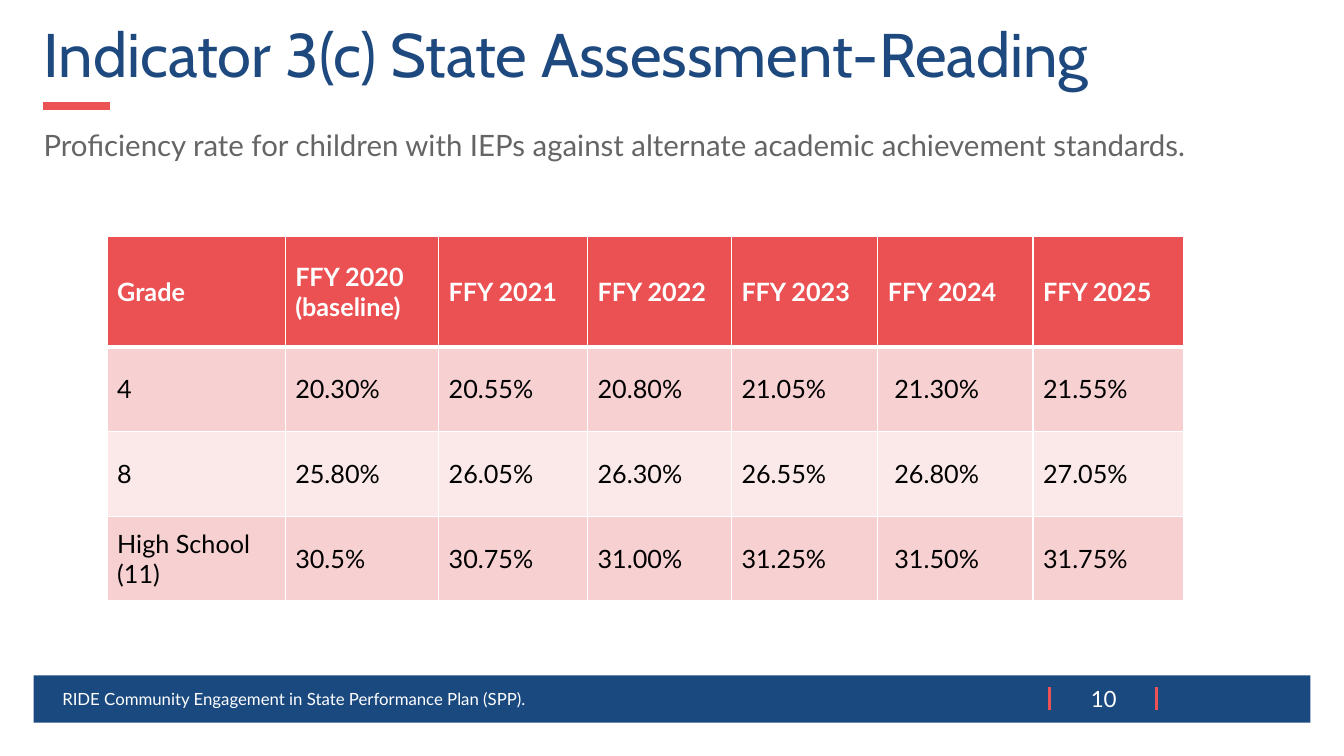
"""Build the Indicator 3(c) reading assessment slide."""
from typing import NamedTuple

from lxml import etree
from pptx import Presentation
from pptx.dml.color import RGBColor
from pptx.enum.shapes import MSO_CONNECTOR, MSO_SHAPE
from pptx.enum.text import MSO_ANCHOR, MSO_AUTO_SIZE, PP_ALIGN
from pptx.oxml.ns import qn
from pptx.slide import Slide
from pptx.table import _Cell
from pptx.text.text import TextFrame
from pptx.util import Pt

STRAIGHT = MSO_CONNECTOR.STRAIGHT
RECTANGLE = MSO_SHAPE.RECTANGLE
TOP, MIDDLE = MSO_ANCHOR.TOP, MSO_ANCHOR.MIDDLE
LEFT, CENTER = PP_ALIGN.LEFT, PP_ALIGN.CENTER
NO_AUTOFIT = MSO_AUTO_SIZE.NONE

NAVY, CORAL, WHITE = "1A497F", "EC5153", "FFFFFF"
HEADER_FILL = "EB5152"
BAND_FILLS = ("F7D0D1", "FBE9E9")
TEXT_FONT = "Lato"


class Box(NamedTuple):
    left: float
    top: float
    width: float
    height: float


class Style(NamedTuple):
    size: float
    color: str
    font: str = TEXT_FONT
    bold: bool = False
    align: PP_ALIGN = LEFT
    anchor: MSO_ANCHOR = MIDDLE
    line_spacing: float = 1.0


class Label(NamedTuple):
    text: str
    box: Box
    style: Style


class Rule(NamedTuple):
    x1: float
    y1: float
    x2: float
    y2: float
    weight: float


TITLE = Label(
    "Indicator 3(c) State Assessment-Reading",
    Box(24, 13.7, 912, 55.4),
    Style(44, "1E497F", font="Cabin", line_spacing=0.9),
)
LABELS = (
    Label(
        "RIDE Community Engagement in State Performance Plan (SPP).",
        Box(37.4, 484.6, 610, 28.8),
        Style(12, WHITE),
    ),
    Label("10", Box(765.4, 486, 46, 26.6), Style(16, WHITE, align=CENTER)),
    Label(
        "Proficiency rate for children with IEPs against alternate academic "
        "achievement standards.",
        Box(24, 81.4, 912, 67),
        Style(21, "656565", anchor=TOP, line_spacing=1.23),
    ),
)
FOOTER_BAR = Box(24, 482.4, 912, 33.8)
TITLE_RULE = Rule(31, 75.6, 78.5, 75.6, 6)
PAGE_NUMBER_RULES = tuple(Rule(x, 491, x, 507, 2.25) for x in (825.8, 749.5))

TABLE_LEFT, TABLE_TOP = 76.5, 169.2
COLUMN_WIDTHS = (127.2, 109.6, 106.4, 102.8, 104.6, 110.8, 107.7)
HEADER_HEIGHT, GRADE_HEIGHT = 78.6, 60.5
HEADER_STYLE = Style(18, WHITE, bold=True)
GRADE_STYLE = Style(18, "000000")
TARGETS = (
    ("Grade", "FFY 2020\n(baseline)", "FFY 2021", "FFY 2022", "FFY 2023",
     "FFY 2024", "FFY 2025"),
    ("4", "20.30%", "20.55%", "20.80%", "21.05%", " 21.30%", "21.55%"),
    ("8", "25.80%", "26.05%", "26.30%", "26.55%", " 26.80%", "27.05%"),
    ("High School (11)", "30.5%", "30.75%", "31.00%", "31.25%", " 31.50%",
     "31.75%"),
)


def rgb(color: str) -> RGBColor:
    """Convert a hex string to a colour."""
    return RGBColor.from_string(color)


def bounds(box: Box) -> tuple[Pt, ...]:
    """Give a box in slide lengths."""
    return tuple(Pt(length) for length in box)


def write(frame: TextFrame, text: str, style: Style) -> None:
    """Fill a text frame and format its paragraphs."""
    frame.text = text
    frame.word_wrap = True
    for paragraph in frame.paragraphs:
        paragraph.alignment = style.align
        paragraph.line_spacing = style.line_spacing
        paragraph.font.name = style.font
        paragraph.font.size = Pt(style.size)
        paragraph.font.bold = style.bold
        paragraph.font.color.rgb = rgb(style.color)


def add_title(slide: Slide, label: Label) -> None:
    """Place and format the title placeholder."""
    title = slide.shapes.title
    title.left, title.top, title.width, title.height = bounds(label.box)
    write(title.text_frame, label.text, label.style)
    title.text_frame.auto_size = NO_AUTOFIT
    title.text_frame.vertical_anchor = label.style.anchor


def add_label(slide: Slide, label: Label) -> None:
    """Add a text box."""
    frame = slide.shapes.add_textbox(*bounds(label.box)).text_frame
    write(frame, label.text, label.style)
    frame.vertical_anchor = label.style.anchor


def add_rule(slide: Slide, rule: Rule) -> None:
    """Add a coral line."""
    ends = (Pt(length) for length in rule[:4])
    line = slide.shapes.add_connector(STRAIGHT, *ends)
    line.line.color.rgb = rgb(CORAL)
    line.line.width = Pt(rule.weight)
    etree.SubElement(line._element.spPr, qn("a:effectLst"))


def add_footer_bar(slide: Slide, box: Box) -> None:
    """Add the navy footer bar."""
    bar = slide.shapes.add_shape(RECTANGLE, *bounds(box))
    bar.shadow.inherit = False
    bar.fill.solid()
    bar.fill.fore_color.rgb = rgb(NAVY)
    bar.line.fill.background()


def set_borders(cell: _Cell, top: float, bottom: float) -> None:
    """Give a cell white borders, one point wide at the sides."""
    properties = cell._tc.get_or_add_tcPr()
    weights = {"a:lnL": 1, "a:lnR": 1, "a:lnT": top, "a:lnB": bottom}
    for position, (tag, weight) in enumerate(weights.items()):
        border = etree.Element(qn(tag), w=str(Pt(weight)))
        fill = etree.SubElement(border, qn("a:solidFill"))
        etree.SubElement(fill, qn("a:srgbClr"), val=WHITE)
        properties.insert(position, border)


def add_targets(slide: Slide) -> None:
    """Add the table of yearly targets by grade."""
    heights = (HEADER_HEIGHT,) + (GRADE_HEIGHT,) * (len(TARGETS) - 1)
    box = Box(TABLE_LEFT, TABLE_TOP, sum(COLUMN_WIDTHS), sum(heights))
    table = slide.shapes.add_table(
        len(TARGETS), len(COLUMN_WIDTHS), *bounds(box)
    ).table
    for column, width in zip(table.columns, COLUMN_WIDTHS):
        column.width = Pt(width)
    for index, (row, height, texts) in enumerate(
        zip(table.rows, heights, TARGETS)
    ):
        row.height = Pt(height)
        is_header = index == 0
        style = HEADER_STYLE if is_header else GRADE_STYLE
        fill = HEADER_FILL if is_header else BAND_FILLS[(index - 1) % 2]
        for cell, text in zip(row.cells, texts):
            write(cell.text_frame, text, style)
            cell.vertical_anchor = style.anchor
            cell.fill.solid()
            cell.fill.fore_color.rgb = rgb(fill)
            set_borders(cell, 3 if index == 1 else 1, 3 if is_header else 1)


def main() -> None:
    """Build and save the slide."""
    deck = Presentation()
    deck.slide_width, deck.slide_height = Pt(960), Pt(540)
    slide = deck.slides.add_slide(deck.slide_layouts.get_by_name("Title Only"))
    add_rule(slide, TITLE_RULE)
    add_footer_bar(slide, FOOTER_BAR)
    for rule in PAGE_NUMBER_RULES:
        add_rule(slide, rule)
    add_title(slide, TITLE)
    for label in LABELS:
        add_label(slide, label)
    add_targets(slide)
    deck.save("out.pptx")


if __name__ == "__main__":
    main()
